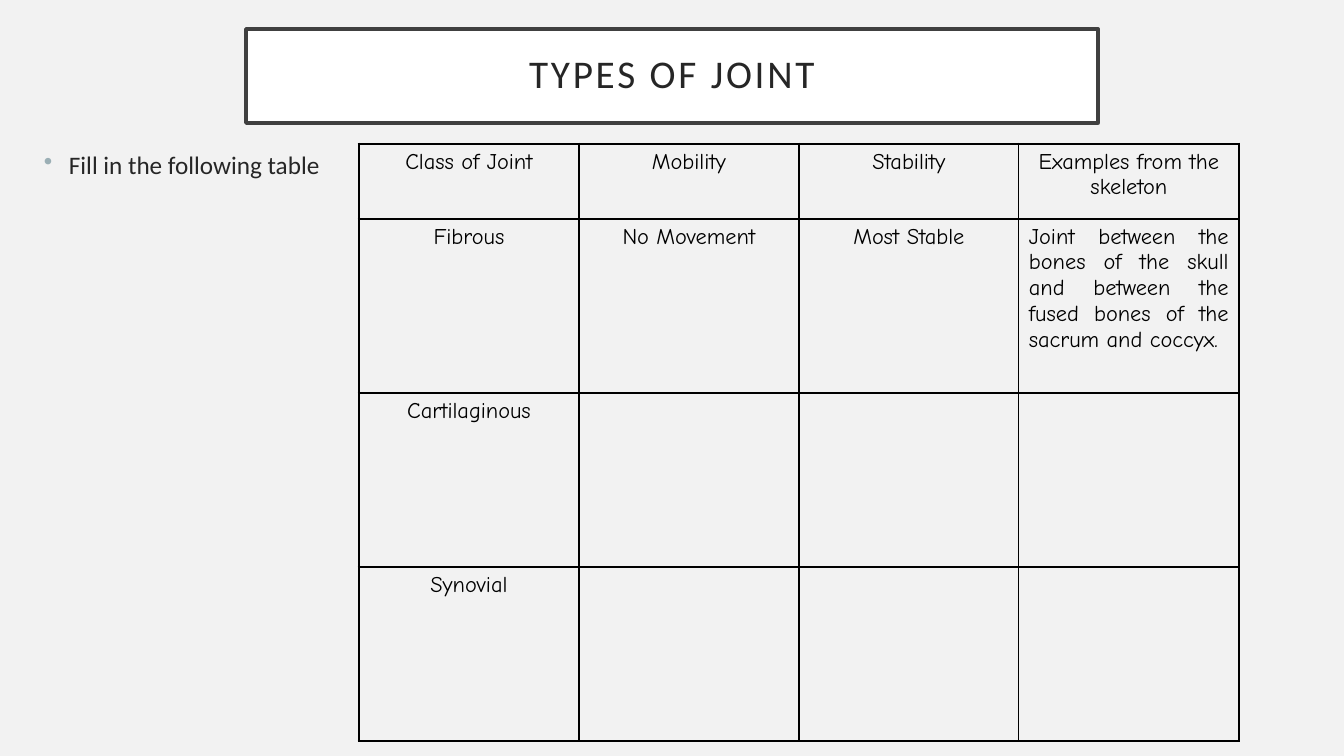
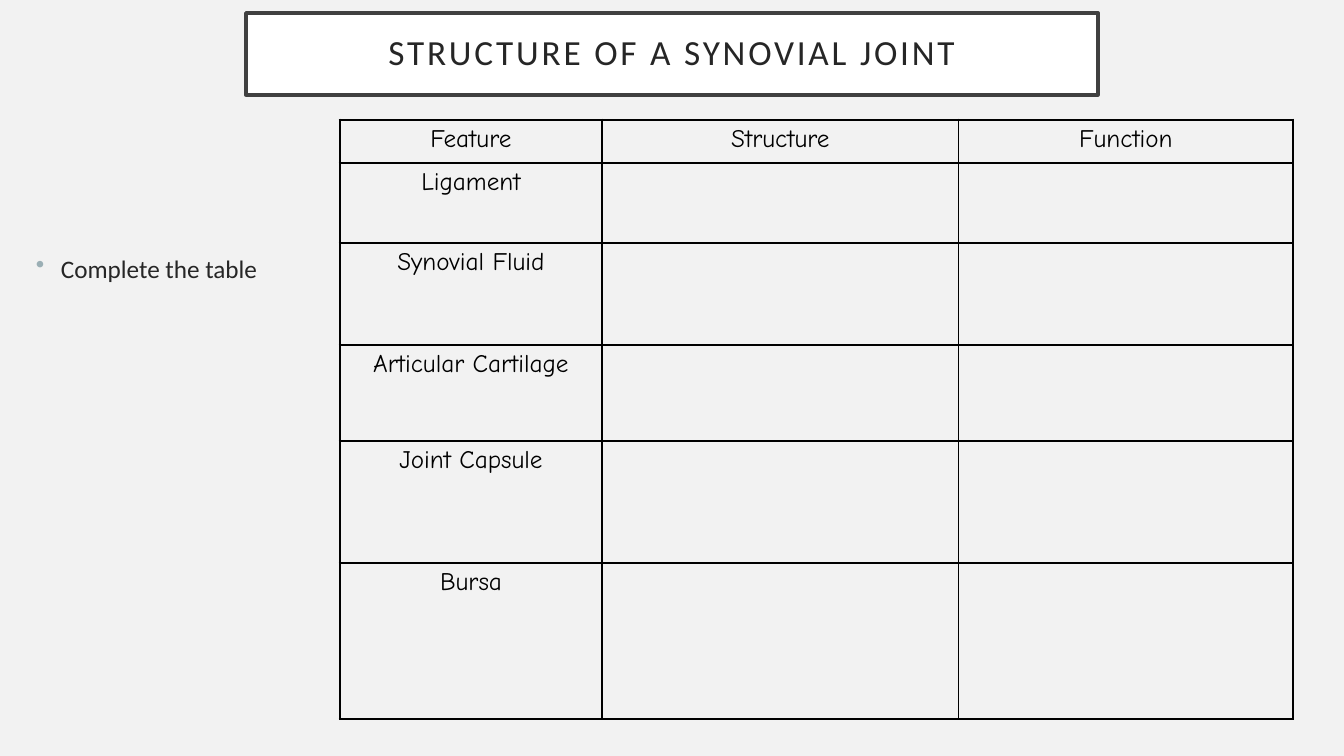
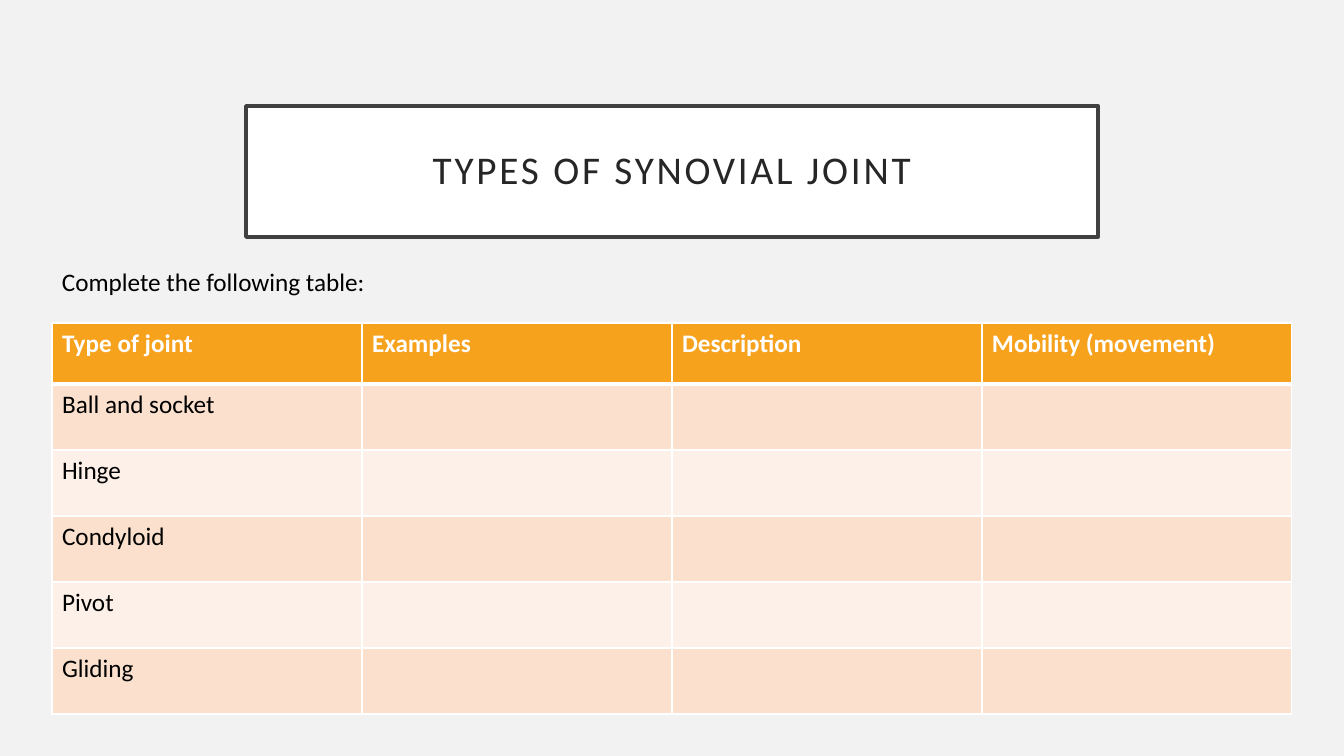
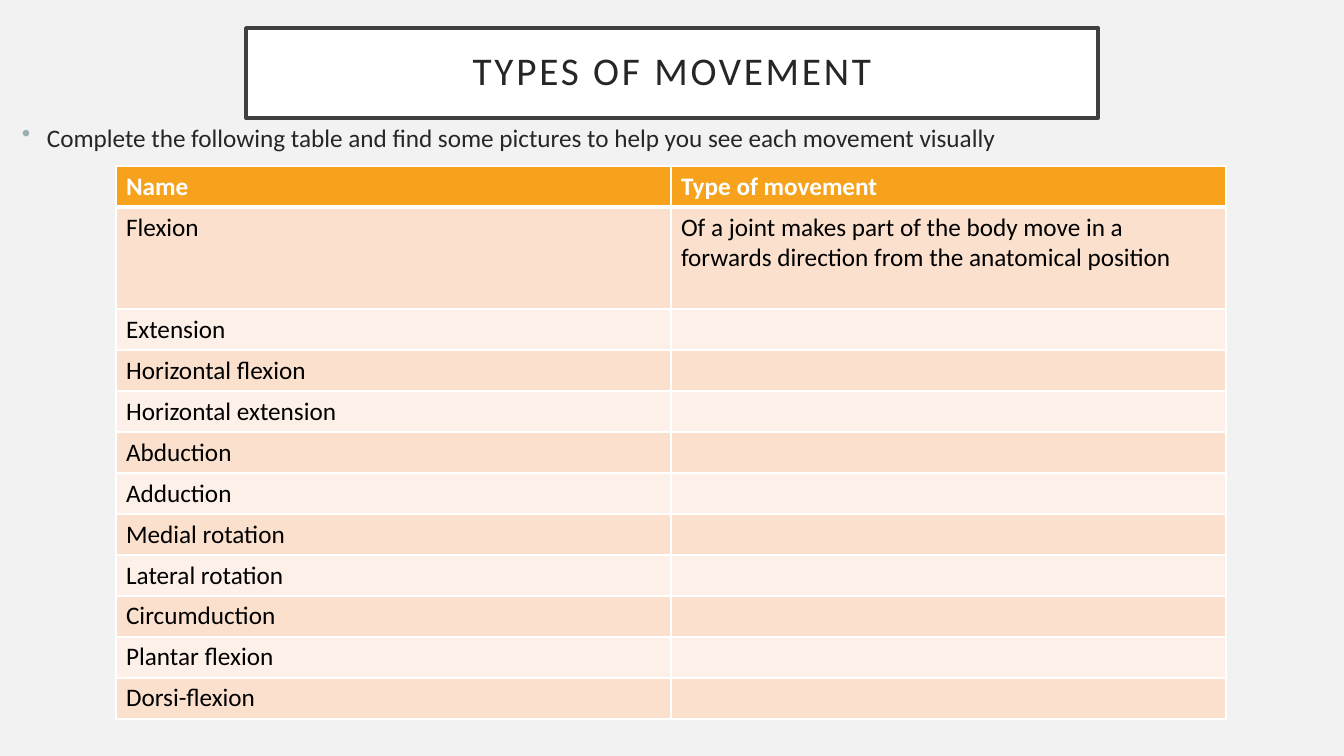
from dataclasses import dataclass

from lxml.etree import SubElement
from pptx import Presentation
from pptx.dml.color import RGBColor
from pptx.enum.shapes import MSO_SHAPE as Shape
from pptx.enum.text import MSO_ANCHOR as Anchor, PP_ALIGN as Align
from pptx.oxml.ns import qn
from pptx.util import Pt

WIDTH, HEIGHT = 1344, 756
EMU_PER_PX = 12192000 / WIDTH


@dataclass(frozen=True)
class Theme:
    """Colours, fonts and type sizes shared by all slides."""

    background: str = "F2F2F2"
    white: str = "FFFFFF"
    black: str = "000000"
    ink: str = "262626"
    frame: str = "404040"
    bullet: str = "9BAFB5"
    header: str = "F6A21D"
    bands: tuple = ("FBE0CD", "FDF0E8")
    font: str = "Calibri"
    hand_font: str = "Comic Neue"
    title_size: float = 28
    text_size: float = 18
    small_size: float = 16
    frame_width: float = 2.5
    thin: float = 1
    outer: float = 2.25
    header_rule: float = 3


def px(length):
    """Turn a length in px into EMU."""
    return round(length * EMU_PER_PX)


def box(*lengths):
    """Turn left, top, width and height into EMU."""
    return [px(length) for length in lengths]


def color(code):
    """Turn a hex code into a colour."""
    return RGBColor.from_string(code)


class Deck:
    """Holds the theme and the current slide, and draws each kind of element."""

    def __init__(self, theme):
        self.theme = theme
        self.presentation = Presentation()
        self.presentation.slide_width = px(WIDTH)
        self.presentation.slide_height = px(HEIGHT)
        self.slide = None

    def new_slide(self):
        """Start a slide on the blank layout."""
        self.slide = self.presentation.slides.add_slide(self.presentation.slide_layouts[6])
        fill = self.slide.background.fill
        fill.solid()
        fill.fore_color.rgb = color(self.theme.background)

    def put_text(self, frame, text, ink, size=None, font=None, bold=False, align=Align.LEFT):
        """Fill a text frame with one styled paragraph."""
        paragraph = frame.paragraphs[0]
        paragraph.text = text
        paragraph.alignment = align
        style = paragraph.font
        style.name = font or self.theme.font
        style.size = Pt(size or self.theme.text_size)
        style.bold = bold
        style.color.rgb = color(ink)
        return paragraph

    def title(self, text, top, height, size=None):
        """Draw the framed title."""
        theme = self.theme
        shape = self.slide.shapes.add_shape(Shape.RECTANGLE, *box(246, top, 852, height))
        shape.shadow.inherit = False
        shape.fill.solid()
        shape.fill.fore_color.rgb = color(theme.white)
        shape.line.color.rgb = color(theme.frame)
        shape.line.width = Pt(theme.frame_width)
        frame = shape.text_frame
        frame.word_wrap = True
        frame.vertical_anchor = Anchor.MIDDLE
        frame.margin_left = frame.margin_right = frame.margin_top = frame.margin_bottom = px(20)
        paragraph = self.put_text(frame, text, theme.ink, size or theme.title_size,
                                  align=Align.CENTER)
        paragraph.line_spacing = 0.9
        paragraph.runs[0].font._element.set("spc", "200")

    def text(self, text, left, top, width, height, ink=None):
        """Add a plain line of text."""
        frame = self.slide.shapes.add_textbox(*box(left, top, width, height)).text_frame
        frame.word_wrap = True
        return self.put_text(frame, text, ink or self.theme.black)

    def bullet(self, text, left, top, width=852):
        """Add a bulleted instruction."""
        paragraph = self.text(text, left, top, width, 342, self.theme.ink)
        properties = paragraph._p.get_or_add_pPr()
        properties.set("marL", str(px(25)))
        properties.set("indent", str(-px(25)))
        mark_color = properties.makeelement(qn("a:buClr"))
        SubElement(mark_color, qn("a:srgbClr"), val=self.theme.bullet)
        mark = properties.makeelement(qn("a:buChar"), char="•")
        properties.insert_element_before(mark_color, "a:defRPr")
        properties.insert_element_before(mark, "a:defRPr")

    def borders(self, cell, ink, **widths):
        """Draw the given sides of a cell, in schema order L, R, T, B."""
        properties = cell._tc.get_or_add_tcPr()
        for side, width in widths.items():
            line = SubElement(properties, qn(f"a:ln{side}"), w=str(Pt(width)))
            fill = SubElement(line, qn("a:solidFill"))
            SubElement(fill, qn("a:srgbClr"), val=ink)

    def table(self, left, top, columns, heights, rows, styles, ink, across, down, fills=None):
        """Add a table ruled by the line widths across and down, with a text style per row."""
        shape = self.slide.shapes.add_table(
            len(heights), len(columns), *box(left, top, sum(columns), sum(heights)))
        table = shape.table
        table.first_row = table.horz_banding = False
        for column, width in zip(table.columns, columns):
            column.width = px(width)
        for i, (row, height) in enumerate(zip(table.rows, heights)):
            row.height = px(height)
            for j, cell in enumerate(row.cells):
                self.borders(cell, ink, L=down[j], R=down[j + 1], T=across[i], B=across[i + 1])
                if fills:
                    cell.fill.solid()
                    cell.fill.fore_color.rgb = color(fills[i])
                else:
                    cell.fill.background()
                if j < len(rows[i]):
                    self.put_text(cell.text_frame, rows[i][j], **styles[i])
        return table

    def grid_table(self, left, top, columns, heights, rows, size):
        """Add an unfilled table with a heavy outer border and handwritten text."""
        theme = self.theme
        across, down = ([theme.outer] + [theme.thin] * (len(tracks) - 1) + [theme.outer]
                        for tracks in (heights, columns))
        style = dict(ink=theme.black, size=size, font=theme.hand_font, align=Align.CENTER)
        return self.table(left, top, columns, heights, rows, [style] * len(heights),
                          theme.black, across, down)

    def banded_table(self, left, top, columns, heights, rows):
        """Add a table with a bold header and alternating bands."""
        theme = self.theme
        body_count = len(heights) - 1
        across = [theme.thin, theme.header_rule] + [theme.thin] * body_count
        down = [theme.thin] * (len(columns) + 1)
        fills = [theme.header] + [theme.bands[i % 2] for i in range(body_count)]
        styles = [dict(ink=theme.white, bold=True)] + [dict(ink=theme.black)] * body_count
        return self.table(left, top, columns, heights, rows, styles,
                          theme.white, across, down, fills)


def joint_types(deck):
    """Build the slide on classes of joint."""
    deck.new_slide()
    deck.title("TYPES OF JOINT", 29, 94)
    deck.bullet("Fill in the following table", 34, 144)
    table = deck.grid_table(359, 144, [220] * 4, [75] + [174] * 3, [
        ["Class of Joint", "Mobility", "Stability", "Examples from the skeleton"],
        ["Fibrous", "No Movement", "Most Stable",
         "Joint between the bones of the skull and between the fused bones "
         "of the sacrum and coccyx."],
        ["Cartilaginous"],
        ["Synovial"],
    ], deck.theme.small_size)
    table.cell(1, 3).text_frame.paragraphs[0].alignment = Align.JUSTIFY


def synovial_structure(deck):
    """Build the slide on the parts of a synovial joint."""
    deck.new_slide()
    deck.title("STRUCTURE OF A SYNOVIAL JOINT", 13, 82, 25.2)
    deck.bullet("Complete the table", 26, 248)
    deck.grid_table(340, 120, [262, 357, 334], [43, 80, 102, 96, 122, 156], [
        ["Feature", "Structure", "Function"],
        ["Ligament"],
        ["Synovial Fluid"],
        ["Articular Cartilage"],
        ["Joint Capsule"],
        ["Bursa"],
    ], deck.theme.text_size)


def synovial_types(deck):
    """Build the slide on kinds of synovial joint."""
    deck.new_slide()
    deck.title("TYPES OF SYNOVIAL JOINT", 106, 131)
    deck.banded_table(52, 323, [310] * 4, [61] + [66] * 5, [
        ["Type of joint", "Examples", "Description", "Mobility (movement)"],
        ["Ball and socket"],
        ["Hinge"],
        ["Condyloid"],
        ["Pivot"],
        ["Gliding"],
    ])
    deck.text("Complete the following table:", 52, 261, 440, 40)


def movement_types(deck):
    """Build the slide on kinds of movement."""
    deck.new_slide()
    deck.title("TYPES OF MOVEMENT", 28, 90)
    deck.bullet("Complete the following table and find some pictures to help you see "
                "each movement visually", 12, 117, 1215)
    deck.banded_table(116, 166, [555] * 2, [41, 102] + [41] * 10, [
        ["Name", "Type of movement"],
        ["Flexion", "Of a joint makes part of the body move in a forwards direction "
                    "from the anatomical position"],
        ["Extension"],
        ["Horizontal flexion"],
        ["Horizontal extension"],
        ["Abduction"],
        ["Adduction"],
        ["Medial rotation"],
        ["Lateral rotation"],
        ["Circumduction"],
        ["Plantar flexion"],
        ["Dorsi-flexion"],
    ])


def main():
    """Build and save the presentation."""
    deck = Deck(Theme())
    for build in (joint_types, synovial_structure, synovial_types, movement_types):
        build(deck)
    deck.presentation.save("out.pptx")


if __name__ == "__main__":
    main()
